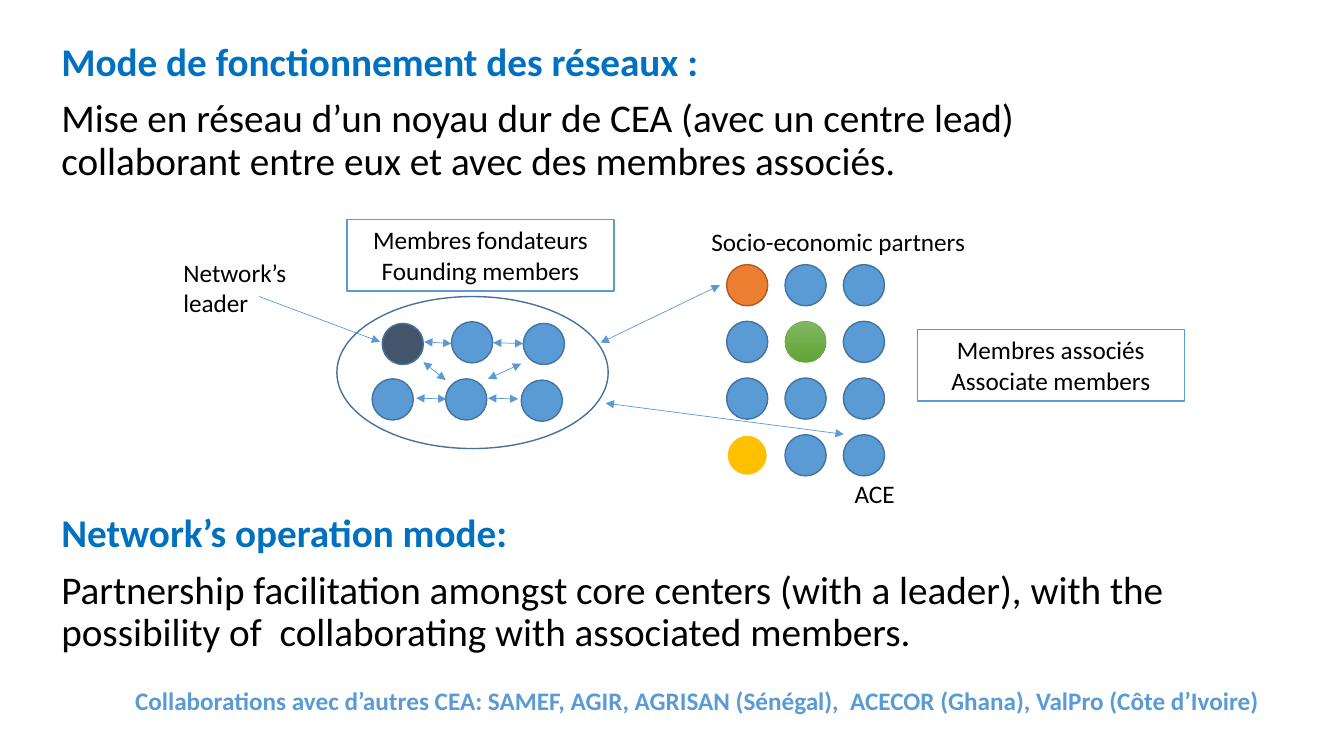
from dataclasses import dataclass

from pptx import Presentation
from pptx import util as u
from pptx.dml import color
from pptx.enum import shapes, text
from pptx.oxml import ns, xmlchemy as x

WIDTH, HEIGHT = u.Inches(13.333), u.Inches(7.5)
COLUMN, ROW = WIDTH / 32, HEIGHT / 18
FONT = "Calibri"
DOT = 0.98
COLORS = {
    "heading": "0070C0",
    "black": "000000",
    "white": "FFFFFF",
    "blue": "5B9BD5",
    "blue_edge": "43739E",
    "navy": "44546A",
    "orange": "ED7D31",
    "orange_edge": "AF5C24",
    "gold": "FFC000",
    "green_top": "81B861",
    "green_bottom": "62A336",
    "green_edge": "70AD47",
}


@dataclass(frozen=True)
class Area:
    column: float
    row: float
    columns: float
    rows: float

    def lengths(self) -> tuple[int, int, int, int]:
        return (int(self.column * COLUMN), int(self.row * ROW),
                int(self.columns * COLUMN), int(self.rows * ROW))


@dataclass(frozen=True)
class BodyParagraph:
    words: str
    heading: bool = False
    space_before: float = 10


@dataclass(frozen=True)
class Dot:
    column: float
    row: float
    fill: str = "blue"
    edge: str = "blue_edge"
    edge_width: float = 1


@dataclass(frozen=True)
class Label:
    words: str
    area: Area
    color: str = "black"
    bold: bool = False
    framed: bool = False


@dataclass(frozen=True)
class Arrow:
    start: tuple[float, float]
    end: tuple[float, float]
    double: bool = True


BODY_AREA = Area(1.22, 0.89, 27.6, 16.32)
BODY = [
    BodyParagraph("Mode de fonctionnement des réseaux :", heading=True),
    BodyParagraph("Mise en réseau d’un noyau dur de CEA (avec un centre lead) "
                  "collaborant entre eux et avec des membres associés."),
    BodyParagraph("Network’s operation mode:", heading=True, space_before=236),
    BodyParagraph("Partnership facilitation amongst core centers (with a leader), with the "
                  "possibility of  collaborating with associated members."),
]
FOUNDERS = [
    Dot(9.1, 7.7, "navy"), Dot(10.75, 7.66), Dot(12.46, 7.7),
    Dot(8.86, 9.02), Dot(10.61, 9.02), Dot(12.41, 9.05),
]
FOUNDERS_RING = Area(8.02, 7.06, 6.46, 3.62)
SPECIAL_PARTNERS = {
    (0, 0): ("orange", "orange_edge", 1),
    (1, 1): ("green", "green_edge", 0.5),
    (0, 3): ("gold", "white", 1.5),
}
PARTNERS = [
    Dot(17.3 + 1.39 * column, 6.3 + 1.35 * row,
        *SPECIAL_PARTNERS.get((column, row), ()))
    for row in range(4) for column in range(3)
]
LABELS = [
    Label("Membres fondateurs\nFounding members", Area(8.26, 5.23, 6.36, 1.7), framed=True),
    Label("Membres associés\nAssociate members", Area(21.84, 7.85, 6.36, 1.7), framed=True),
    Label("Network’s leader", Area(4.13, 6, 3.34, 1.7)),
    Label("ACE", Area(20.11, 11.26, 1.73, 0.96)),
    Label("Socio-economic partners", Area(16.7, 5.28, 8.57, 0.96)),
    Label("Collaborations avec d’autres CEA: SAMEF, AGIR, AGRISAN (Sénégal),  "
          "ACECOR (Ghana), ValPro (Côte d’Ivoire)",
          Area(2.98, 16.2, 28.27, 0.96), color="blue", bold=True),
]
ARROWS = [
    Arrow((11.74, 8.16), (12.46, 8.18)),
    Arrow((10.1, 8.14), (10.75, 8.18)),
    Arrow((11.62, 9.48), (12.34, 9.5)),
    Arrow((9.91, 9.48), (10.63, 9.5)),
    Arrow((14.3, 8.16), (17.14, 6.79)),
    Arrow((14.42, 9.6), (20.09, 10.34)),
    Arrow((11.62, 9.02), (12.41, 8.66)),
    Arrow((10.08, 8.62), (10.61, 9.05)),
    Arrow((6.17, 7.06), (9.05, 8.14), double=False),
]


def rgb(name: str) -> color.RGBColor:
    return color.RGBColor.from_string(COLORS[name])


def set_line(line, name: str, width: float) -> None:
    line.color.rgb = rgb(name)
    line.width = u.Pt(width)


def style_font(paragraph, size: float, name: str, bold: bool) -> None:
    font = paragraph.font
    font.name, font.size, font.bold = FONT, u.Pt(size), bold
    font.color.rgb = rgb(name)


def fill_body(shape) -> None:
    shape.left, shape.top, shape.width, shape.height = BODY_AREA.lengths()
    frame = shape.text_frame
    frame.text = "\n".join(item.words for item in BODY)
    frame.auto_size = text.MSO_AUTO_SIZE.NONE
    for paragraph, item in zip(frame.paragraphs, BODY):
        paragraph.line_spacing = 0.9
        paragraph.space_before = u.Pt(item.space_before)
        style_font(paragraph, 28, "heading" if item.heading else "black", item.heading)
        properties = paragraph._p.get_or_add_pPr()
        properties.set("marL", "0")
        properties.set("indent", "0")
        properties.insert_element_before(x.OxmlElement("a:buNone"), "a:tabLst", "a:defRPr")


def draw_ellipse(slide, area: Area, edge: str, edge_width: float):
    shape = slide.shapes.add_shape(shapes.MSO_SHAPE.OVAL, *area.lengths())
    shape.shadow.inherit = False
    shape.fill.background()
    set_line(shape.line, edge, edge_width)
    return shape


def draw_dot(slide, dot: Dot) -> None:
    shape = draw_ellipse(slide, Area(dot.column, dot.row, DOT, DOT), dot.edge, dot.edge_width)
    if dot.fill == "green":
        shape.fill.gradient()
        shape.fill.gradient_angle = 270
        for stop, name in zip(shape.fill.gradient_stops, ("green_top", "green_bottom")):
            stop.color.rgb = rgb(name)
    else:
        shape.fill.solid()
        shape.fill.fore_color.rgb = rgb(dot.fill)


def draw_label(slide, label: Label) -> None:
    shape = slide.shapes.add_textbox(*label.area.lengths())
    frame = shape.text_frame
    frame.word_wrap = True
    frame.auto_size = text.MSO_AUTO_SIZE.SHAPE_TO_FIT_TEXT
    frame.text = label.words
    if label.framed:
        shape.fill.solid()
        shape.fill.fore_color.rgb = rgb("white")
        set_line(shape.line, "blue", 1)
    for paragraph in frame.paragraphs:
        style_font(paragraph, 18, label.color, label.bold)
        paragraph.alignment = text.PP_ALIGN.CENTER if label.framed else text.PP_ALIGN.LEFT


def draw_arrow(slide, arrow: Arrow) -> None:
    ends = [int(value * unit) for point in (arrow.start, arrow.end)
            for value, unit in zip(point, (COLUMN, ROW))]
    connector = slide.shapes.add_connector(shapes.MSO_CONNECTOR.STRAIGHT, *ends)
    set_line(connector.line, "blue", 0.5)
    properties = connector._element.spPr
    outline = properties.find(ns.qn("a:ln"))
    for tag in ("a:headEnd", "a:tailEnd") if arrow.double else ("a:tailEnd",):
        head = x.OxmlElement(tag)
        head.set("type", "triangle")
        outline.append(head)
    properties.append(x.OxmlElement("a:effectLst"))


def main() -> None:
    presentation = Presentation()
    presentation.slide_width, presentation.slide_height = WIDTH, HEIGHT
    slide = presentation.slides.add_slide(presentation.slide_layouts[1])
    title = slide.shapes.title._element
    title.getparent().remove(title)
    fill_body(slide.placeholders[1])
    for dot in FOUNDERS + PARTNERS:
        draw_dot(slide, dot)
    draw_ellipse(slide, FOUNDERS_RING, "blue_edge", 1)
    for arrow in ARROWS:
        draw_arrow(slide, arrow)
    for label in LABELS:
        draw_label(slide, label)
    presentation.save("out.pptx")


if __name__ == "__main__":
    main()
